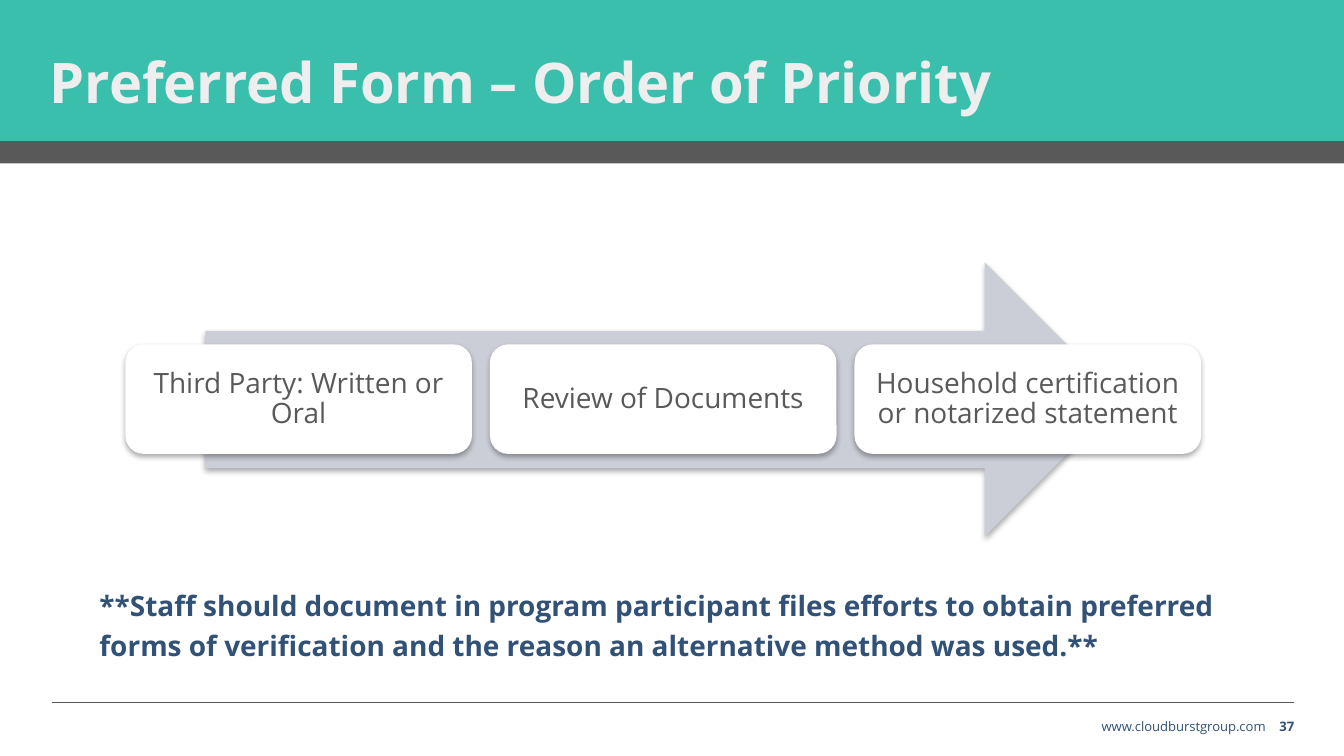
from dataclasses import dataclass

from lxml.etree import SubElement
from pptx import Presentation
from pptx.dml.color import RGBColor
from pptx.enum.shapes import MSO_CONNECTOR, MSO_SHAPE
from pptx.enum.text import MSO_ANCHOR, MSO_AUTO_SIZE, PP_ALIGN
from pptx.oxml.ns import qn
from pptx.util import Cm, Pt


@dataclass(frozen=True)
class Theme:
    font: str = "Open Sans"
    teal: str = "3BBFAD"
    gray: str = "595959"
    navy: str = "315177"
    arrow: str = "CBCED6"
    white: str = "FFFFFF"
    title_color: str = "EEEEEE"
    title_size: float = 30
    text_size: float = 15
    footer_size: float = 7


class SlideBuilder:
    def __init__(self, slide, theme):
        self.slide = slide
        self.theme = theme

    def set_text(self, shape, text, size, color, bold=False, inset=(0, 0),
                 anchor=MSO_ANCHOR.TOP, align=PP_ALIGN.LEFT, spacing=1.0):
        """Fill a shape with one paragraph; inset is (horizontal, vertical) in cm."""
        frame = shape.text_frame
        horizontal, vertical = (Cm(value) for value in inset)
        frame_format = {
            "word_wrap": True, "auto_size": MSO_AUTO_SIZE.NONE, "vertical_anchor": anchor,
            "margin_left": horizontal, "margin_right": horizontal,
            "margin_top": vertical, "margin_bottom": vertical,
        }
        paragraph = frame.paragraphs[0]
        paragraph_format = {"alignment": align, "line_spacing": spacing, "space_before": Pt(0)}
        run = paragraph.add_run()
        run.text = text
        font_format = {"name": self.theme.font, "size": Pt(size), "bold": bold}
        for target, values in ((frame, frame_format), (paragraph, paragraph_format),
                               (run.font, font_format)):
            for name, value in values.items():
                setattr(target, name, value)
        run.font.color.rgb = RGBColor.from_string(color)

    def title(self, text, *box):
        title = self.slide.shapes.title
        for name, value in zip(("left", "top", "width", "height"), box):
            setattr(title, name, Cm(value))
        self.set_text(title, text, self.theme.title_size, self.theme.title_color, bold=True,
                      inset=(0.18, 0.18), anchor=MSO_ANCHOR.MIDDLE, spacing=1.3)

    def text(self, text, size, *box, **style):
        text_box = self.slide.shapes.add_textbox(*map(Cm, box))
        self.set_text(text_box, text, size, self.theme.navy, **style)

    def shape(self, kind, fill, *box, shadow=False):
        shape = self.slide.shapes.add_shape(kind, *map(Cm, box))
        shape.fill.solid()
        shape.fill.fore_color.rgb = RGBColor.from_string(fill)
        shape.line.fill.background()
        shape.shadow.inherit = False
        if shadow:
            self.add_shadow(shape)
        return shape

    def add_shadow(self, shape):
        effects = shape._element.spPr.find(qn("a:effectLst"))
        outer = SubElement(effects, qn("a:outerShdw"), blurRad=str(Pt(3.1)),
                           dist=str(Pt(1.8)), dir="5400000", rotWithShape="0")
        color = SubElement(outer, qn("a:srgbClr"), val="000000")
        SubElement(color, qn("a:alpha"), val="33000")

    def card(self, text, *box):
        card = self.shape(MSO_SHAPE.ROUNDED_RECTANGLE, self.theme.white, *box, shadow=True)
        self.set_text(card, text, self.theme.text_size, self.theme.gray, inset=(0.23, 0.15),
                      anchor=MSO_ANCHOR.MIDDLE, align=PP_ALIGN.CENTER, spacing=0.9)

    def rule(self, left, right, y):
        rule = self.slide.shapes.add_connector(
            MSO_CONNECTOR.STRAIGHT, Cm(left), Cm(y), Cm(right), Cm(y))
        rule.line.color.rgb = RGBColor.from_string(self.theme.gray)
        rule.line.width = Pt(0.75)
        SubElement(rule._element.spPr, qn("a:effectLst"))


def main():
    presentation = Presentation()
    presentation.slide_width, presentation.slide_height = Cm(25.4), Cm(14.29)
    slide = presentation.slides.add_slide(presentation.slide_layouts[5])
    theme = Theme()
    builder = SlideBuilder(slide, theme)

    builder.shape(MSO_SHAPE.RECTANGLE, theme.teal, 0, 0, 25.4, 2.67)
    builder.shape(MSO_SHAPE.RECTANGLE, theme.gray, 0, 2.67, 25.4, 0.42)
    builder.title("Preferred Form – Order of Priority", 0.76, 0, 23.7, 2.67)
    # Bring the title in front of the bands
    slide.shapes._spTree.append(slide.shapes.title._element)

    builder.shape(MSO_SHAPE.RIGHT_ARROW, theme.arrow, 3.88, 4.96, 17.32, 5.18, shadow=True)
    priorities = ("Third Party: Written or Oral", "Review of Documents",
                  "Household certification or notarized statement")
    for index, priority in enumerate(priorities):
        builder.card(priority, 2.37 + 6.89 * index, 6.51, 6.55, 2.07)

    builder.text("**Staff should document in program participant files efforts to obtain "
                 "preferred forms of verification and the reason an alternative method "
                 "was used.**", theme.text_size, 1.7, 10.9, 22, 1.55,
                 bold=True, inset=(0.18, 0.1), spacing=1.2)

    builder.rule(0.99, 24.46, 13.28)
    builder.text("www.cloudburstgroup.com", theme.footer_size, 17, 13.59, 6.92, 0.45,
                 align=PP_ALIGN.RIGHT)
    builder.text("37", theme.footer_size, 23.92, 13.59, 0.54, 0.45,
                 bold=True, align=PP_ALIGN.RIGHT)
    presentation.save("out.pptx")


if __name__ == "__main__":
    main()
